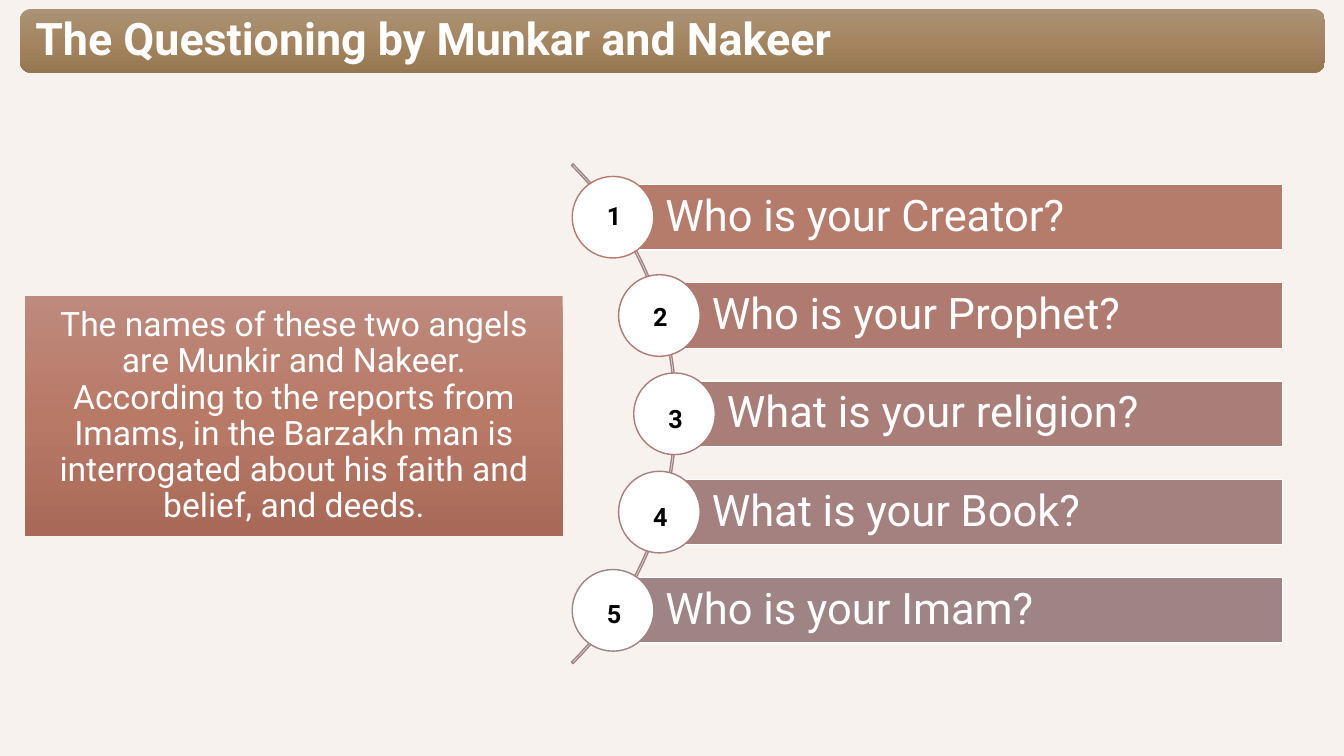
from copy import deepcopy

from pptx import Presentation
from pptx.dml.color import RGBColor
from pptx.enum import shapes, text
from pptx.util import Inches, Pt

WHITE = RGBColor(0xFF, 0xFF, 0xFF)
BLACK = RGBColor(0, 0, 0)
CREAM = RGBColor(0xF7, 0xF2, 0xEE)
MAUVE = RGBColor(0x9E, 0x84, 0x84)
GOLDS = [RGBColor(0xAB, 0x93, 0x77), RGBColor(0xA4, 0x85, 0x60), RGBColor(0x95, 0x77, 0x52)]
CLAYS = [RGBColor(0xBD, 0x8A, 0x7D), RGBColor(0xB9, 0x79, 0x67), RGBColor(0xA8, 0x69, 0x58)]

HEADING = "The Questioning by Munkar and Nakeer"
SUMMARY = (
    "The names of these two angels are Munkir and Nakeer. According to the reports "
    "from Imams, in the Barzakh man is interrogated about his faith and belief, and deeds."
)
# question, colour, bar left, number top
QUESTIONS = [
    ("Who is your Creator?", RGBColor(0xB5, 0x7B, 0x6B), 6.08, 1.94),
    ("Who is your Prophet?", RGBColor(0xAF, 0x7B, 0x71), 6.54, 2.94),
    ("What is your religion?", RGBColor(0xA9, 0x7D, 0x78), 6.69, 3.95),
    ("What is your Book?", RGBColor(0xA4, 0x80, 0x7E), 6.54, 4.92),
    ("Who is your Imam?", MAUVE, 6.08, 5.89),
]
FIRST_TOP, PITCH = 1.83, 0.975
BAR_RIGHT, BAR_HEIGHT = 12.72, 0.65
CIRCLE = 0.81


def add_figure(kind, left, top, width, height, fill=None, line=None):
    figure = slide.shapes.add_shape(
        kind, Inches(left), Inches(top), Inches(width), Inches(height))
    figure.shadow.inherit = False
    if isinstance(fill, list):
        figure.fill.gradient()
        stops = figure.fill._fill._gradFill.gsLst
        stops.append(deepcopy(stops[-1]))
        for stop, color, position in zip(figure.fill.gradient_stops, fill, (0, 0.5, 1)):
            stop.color.rgb = color
            stop.position = position
        figure.fill.gradient_angle = 270
    elif fill is None:
        figure.fill.background()
    else:
        figure.fill.solid()
        figure.fill.fore_color.rgb = fill
    if line is None:
        figure.line.fill.background()
    else:
        figure.line.color.rgb = line
        figure.line.width = Pt(1)
    return figure


def write(holder, words, size, color=WHITE, bold=False, align=text.PP_ALIGN.LEFT,
          anchor=text.MSO_ANCHOR.MIDDLE, insets=(0.1, 0.1, 0.1, 0.1), spacing=0.9):
    frame = holder.text_frame
    frame.word_wrap = True
    frame.auto_size = text.MSO_AUTO_SIZE.NONE
    frame.vertical_anchor = anchor
    frame.margin_left, frame.margin_top, frame.margin_right, frame.margin_bottom = map(
        Inches, insets)
    frame.text = words
    paragraph = frame.paragraphs[0]
    paragraph.alignment = align
    paragraph.line_spacing = spacing
    paragraph.space_before = Pt(0)
    font = paragraph.font
    font.name, font.size, font.bold = "Roboto", Pt(size), bold
    font.color.rgb = color


deck = Presentation()
deck.slide_width, deck.slide_height = Inches(13.33), Inches(7.5)
slide = deck.slides.add_slide(deck.slide_layouts[5])
slide.background.fill.solid()
slide.background.fill.fore_color.rgb = CREAM

banner = add_figure(shapes.MSO_SHAPE.ROUNDED_RECTANGLE, 0.2, 0.09, 12.94, 0.63, GOLDS)
heading = slide.shapes.title
banner._element.addnext(heading._element)
heading.left, heading.top = Inches(0.25), Inches(0.12)
heading.width, heading.height = Inches(12.85), Inches(0.57)
write(heading, HEADING, 32, bold=True)

arc = add_figure(shapes.MSO_SHAPE.BLOCK_ARC, -0.3, 0.6, 7.01, 7.01, line=MAUVE)
for index, value in enumerate((189, 27, 0.003)):
    arc.adjustments[index] = value

for index, (question, color, left, number_top) in enumerate(QUESTIONS):
    top = FIRST_TOP + index * PITCH
    bar = add_figure(shapes.MSO_SHAPE.RECTANGLE, left, top, BAR_RIGHT - left, BAR_HEIGHT,
                     color, WHITE)
    write(bar, question, 31, insets=(0.52, 0.09, 0.09, 0.09))
    add_figure(shapes.MSO_SHAPE.OVAL, left - CIRCLE / 2, top + (BAR_HEIGHT - CIRCLE) / 2,
               CIRCLE, CIRCLE, WHITE, color)
    number = slide.shapes.add_textbox(
        Inches(left - 0.16), Inches(number_top), Inches(0.46), Inches(0.4))
    write(number, str(index + 1), 18, BLACK, True, anchor=text.MSO_ANCHOR.TOP,
          insets=(0.1, 0.05, 0.1, 0.05), spacing=1.0)

summary = add_figure(shapes.MSO_SHAPE.RECTANGLE, 0.25, 2.94, 5.33, 2.38, CLAYS)
write(summary, SUMMARY, 24, align=text.PP_ALIGN.CENTER, insets=(0.19,) * 4)

deck.save("out.pptx")
